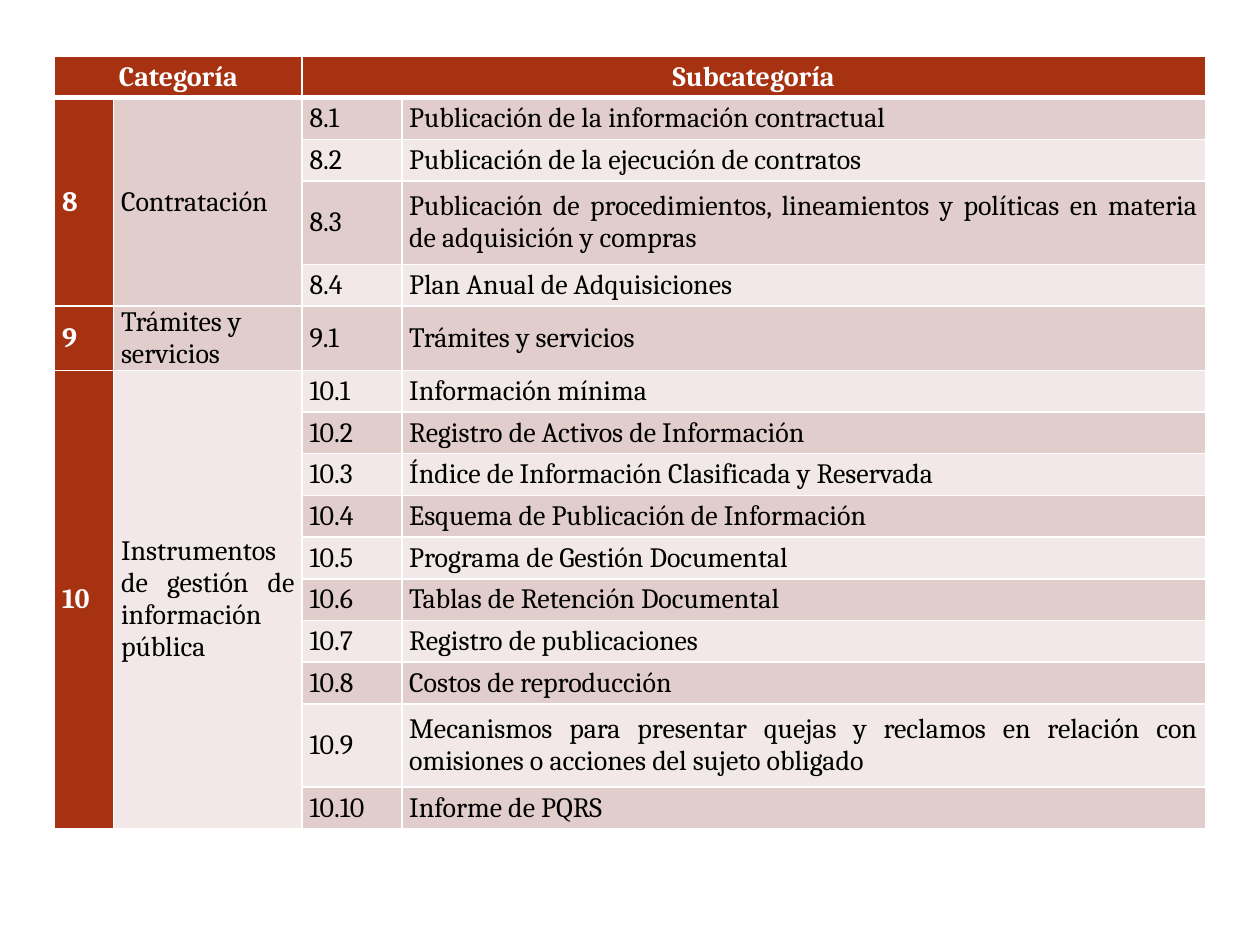
from lxml import etree
from pptx import Presentation
from pptx import util as u
from pptx.dml.color import RGBColor
from pptx.enum import text
from pptx.oxml.ns import qn

RED = RGBColor(0xA6, 0x32, 0x12)
DARK_BAND = RGBColor(0xE1, 0xCE, 0xCC)
LIGHT_BAND = RGBColor(0xF1, 0xE8, 0xE7)
WHITE = RGBColor(0xFF, 0xFF, 0xFF)
BLACK = RGBColor(0, 0, 0)
AL = text.PP_ALIGN

# Category number, name, name alignment, subcategories
CATEGORIES = [
    (8, "Contratación", AL.JUSTIFY, [
        "Publicación de la información contractual",
        "Publicación de la ejecución de contratos",
        "Publicación de procedimientos, lineamientos y políticas en materia "
        "de adquisición y compras",
        "Plan Anual de Adquisiciones",
    ]),
    (9, "Trámites y servicios", AL.LEFT, ["Trámites y servicios"]),
    (10, "Instrumentos de gestión de información pública", AL.JUSTIFY, [
        "Información mínima",
        "Registro de Activos de Información",
        "Índice de Información Clasificada y Reservada",
        "Esquema de Publicación de Información",
        "Programa de Gestión Documental",
        "Tablas de Retención Documental",
        "Registro de publicaciones",
        "Costos de reproducción",
        "Mecanismos para presentar quejas y reclamos en relación con "
        "omisiones o acciones del sujeto obligado",
        "Informe de PQRS",
    ]),
]
COL_WIDTHS = [1.19, 3.8, 2.01, 16.2]
ROW_H = 0.84
CELL_FORMAT = {
    "margin_left": u.Cm(0.15), "margin_right": u.Cm(0.15),
    "margin_top": 0, "margin_bottom": 0,
    "vertical_anchor": text.MSO_ANCHOR.MIDDLE,
}


def set_border(cell, side, width):
    ln = etree.SubElement(cell._tc.get_or_add_tcPr(), qn(f"a:ln{side}"),
                          w=str(u.Pt(width)))
    fill = etree.SubElement(ln, qn("a:solidFill"))
    etree.SubElement(fill, qn("a:srgbClr"), val=str(WHITE))


def write(cell, words, align, color=BLACK, bold=False):
    p = cell.text_frame.paragraphs[0]
    p.alignment = align
    r = p.add_run()
    r.text = words
    font = {"name": "Cambria", "size": u.Pt(16), "bold": bold}
    for name, value in font.items():
        setattr(r.font, name, value)
    r.font.color.rgb = color


prs = Presentation()
prs.slide_width, prs.slide_height = u.Cm(25.4), u.Cm(19.05)
s = prs.slides.add_slide(prs.slide_layouts[6])

# Table grid
n_rows = 1 + sum(len(subs) for *_, subs in CATEGORIES)
table = s.shapes.add_table(n_rows, len(COL_WIDTHS), u.Cm(1.1), u.Cm(1.13),
                           u.Cm(sum(COL_WIDTHS)), u.Cm(ROW_H * n_rows)).table
table.horz_banding = False
for col, width in zip(table.columns, COL_WIDTHS):
    col.width = u.Cm(width)

# Cell borders, fills and margins
for i, row in enumerate(table.rows):
    row.height = u.Cm(ROW_H)
    for j, cell in enumerate(row.cells):
        widths = {"L": 1, "R": 1, "T": 3 if i == 1 else 1, "B": 3 if i == 0 else 1}
        for side, width in widths.items():
            set_border(cell, side, width)
        for name, value in CELL_FORMAT.items():
            setattr(cell, name, value)
        cell.fill.solid()
        band = DARK_BAND if i % 2 else LIGHT_BAND
        cell.fill.fore_color.rgb = RED if i == 0 or j == 0 else band

# Header
for j, words in ((0, "Categoría"), (2, "Subcategoría")):
    table.cell(0, j).merge(table.cell(0, j + 1))
    write(table.cell(0, j), words, AL.CENTER, WHITE, True)

# Categories with their subcategories
top = 1
for number, name, align, subs in CATEGORIES:
    if len(subs) > 1:
        for j in (0, 1):
            table.cell(top, j).merge(table.cell(top + len(subs) - 1, j))
    write(table.cell(top, 0), str(number), AL.JUSTIFY, WHITE, True)
    write(table.cell(top, 1), name, align)
    for k, sub in enumerate(subs):
        write(table.cell(top + k, 2), f"{number}.{k + 1}", AL.JUSTIFY)
        write(table.cell(top + k, 3), sub, AL.JUSTIFY)
        if len(sub) > 80:  # two lines of text
            table.rows[top + k].height = u.Cm(2 * ROW_H)
    top += len(subs)

prs.save("out.pptx")
